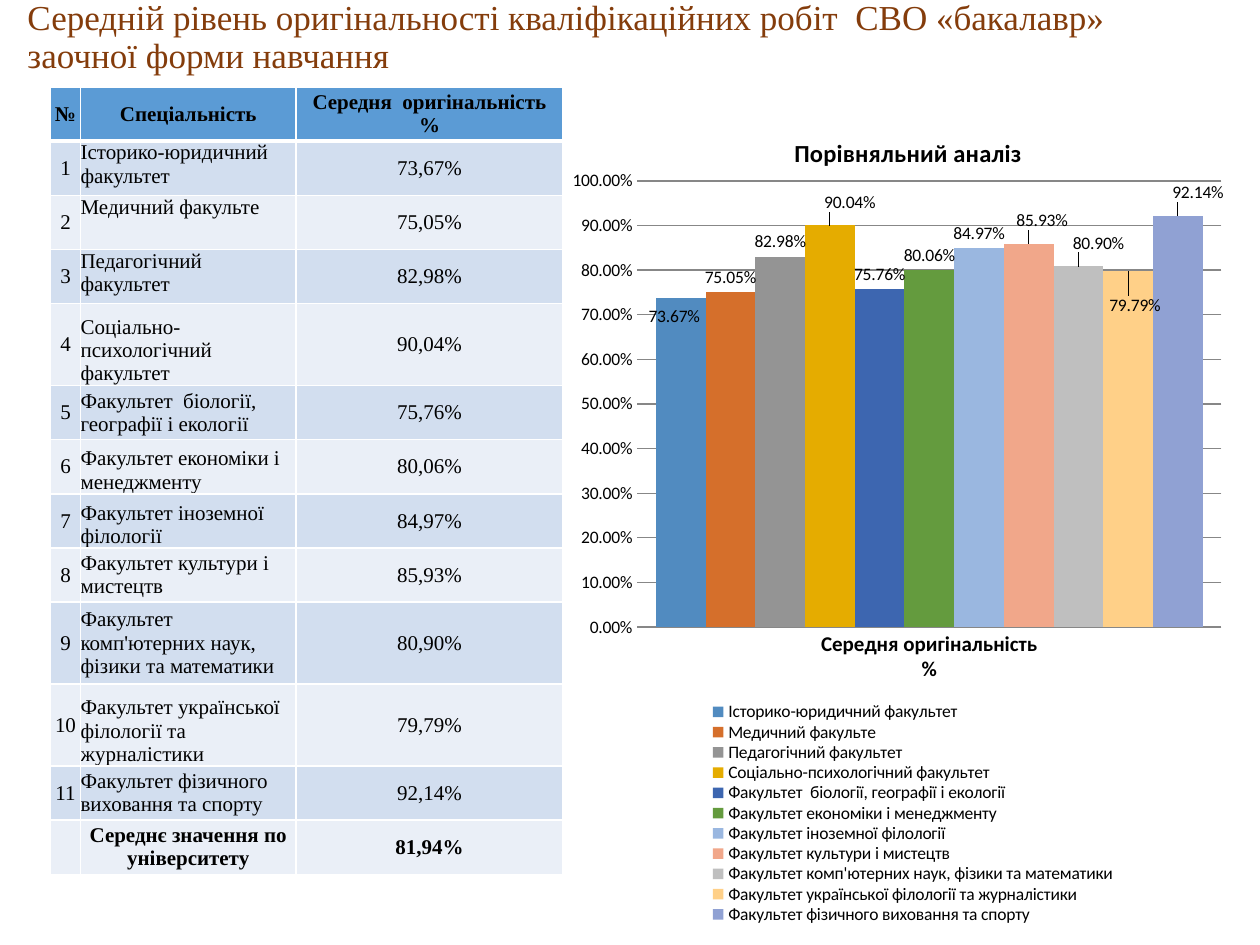
from lxml import etree
from pptx import Presentation
from pptx.chart.data import CategoryChartData
from pptx.dml.color import RGBColor
from pptx.enum import chart as ch, text as tx
from pptx.oxml import parse_xml
from pptx.oxml.ns import nsdecls, qn
from pptx.util import Inches, Pt

BROWN = RGBColor(0x84, 0x3C, 0x0B)
BLACK = RGBColor(0, 0, 0)
GRAY = RGBColor(0x87, 0x87, 0x87)
HEAD = RGBColor(0x5B, 0x9B, 0xD5)
BAND = [RGBColor(0xEA, 0xEF, 0xF7), RGBColor(0xD2, 0xDE, 0xEF)]
BARS = [RGBColor.from_string(c) for c in (
    "518BC0", "D56F2B", "949494", "E5AC00", "3D66B0", "649B3E",
    "9AB7E0", "F1A78A", "BFBFBF", "FFD088", "90A1D3")]
SERIF = "Times New Roman"
TOP, MID, LOW = tx.MSO_ANCHOR.TOP, tx.MSO_ANCHOR.MIDDLE, tx.MSO_ANCHOR.BOTTOM

# name, percent, cell anchor, shift of the bar label as shares of the chart
FACULTIES = [
    ("Історико-юридичний факультет", 73.67, TOP, (-0.01, 0.04)),
    ("Медичний факульте", 75.05, TOP, None),
    ("Педагогічний факультет", 82.98, TOP, None),
    ("Соціально-психологічний факультет", 90.04, LOW, (0.03, -0.01)),
    ("Факультет  біології, географії і екології", 75.76, MID, None),
    ("Факультет економіки і менеджменту", 80.06, LOW, None),
    ("Факультет іноземної філології", 84.97, LOW, None),
    ("Факультет культури і мистецтв", 85.93, MID, (0.02, -0.01)),
    ("Факультет комп'ютерних наук, фізики та математики", 80.90, MID, (0.03, -0.01)),
    ("Факультет української філології та журналістики", 79.79, LOW, (0.01, 0.06)),
    ("Факультет фізичного виховання та спорту", 92.14, MID, (0.03, -0.01)),
]


def style(font, **values):
    color = values.pop("color", BLACK)
    for key, val in values.items():
        setattr(font, key, val)
    font.color.rgb = color


def place(after, **values):
    """Put a manual layout after a chart element, in place of any old one."""
    parent = after.getparent()
    for old in parent.findall(qn("c:layout")):
        parent.remove(old)
    layout = parse_xml(f"<c:layout {nsdecls('c')}><c:manualLayout/></c:layout>")
    for key, val in values.items():
        etree.SubElement(layout[0], qn("c:" + key)).set("val", str(val))
    after.addnext(layout)


prs = Presentation()
prs.slide_width, prs.slide_height = Inches(10), Inches(7.5)
slide = prs.slides.add_slide(prs.slide_layouts[6])

# Title
title = slide.shapes.add_textbox(Inches(0.12), Inches(0.05), Inches(9.76), Inches(0.5))
frame = title.text_frame
frame.word_wrap = True
frame.vertical_anchor = MID
par = frame.paragraphs[0]
par.text = "Середній рівень оригінальності кваліфікаційних робіт  СВО «бакалавр» \vзаочної форми навчання"
par.line_spacing = 0.9
style(par.font, name=SERIF, size=Pt(20), color=BROWN)

# Table
rows = [("№", "Спеціальність", "Середня  оригінальність\v%", MID)]
for num, (name, pct, anchor, _) in enumerate(FACULTIES, 1):
    rows.append((str(num), name, f"{pct:.2f}%".replace(".", ","), anchor))
rows.append(("", "Середнє значення по університету", "81,94%", MID))
last = len(rows) - 1

table = slide.shapes.add_table(len(rows), 3, Inches(0.4), Inches(0.69),
                               Inches(4.07), Inches(6.25)).table
for col, wide in zip(table.columns, (0.24, 1.71, 2.12)):
    col.width = Inches(wide)
for r, (*texts, anchor) in enumerate(rows):
    table.rows[r].height = Inches(0.65 if r in (4, 9, 10) else 0.43)
    for c, words in enumerate(texts):
        cell = table.cell(r, c)
        cell.margin_left = cell.margin_right = cell.margin_top = cell.margin_bottom = 0
        cell.vertical_anchor = anchor if c == 1 else MID
        cell.fill.solid()
        cell.fill.fore_color.rgb = BAND[r % 2] if r else HEAD
        par = cell.text_frame.paragraphs[0]
        par.text = words
        left = c == 1 and 0 < r < last
        par.alignment = tx.PP_ALIGN.LEFT if left else tx.PP_ALIGN.CENTER
        style(par.font, name=SERIF, size=Pt(12), bold=r in (0, last))
        props = cell._tc.get_or_add_tcPr()
        for i, side in enumerate("LRTB"):
            thick = (r, side) in ((0, "B"), (1, "T"))
            props.insert(i, parse_xml(
                f'<a:ln{side} {nsdecls("a")} w="{Pt(3 if thick else 1)}"><a:solidFill>'
                f'<a:srgbClr val="FFFFFF"/></a:solidFill></a:ln{side}>'))

# Chart
data = CategoryChartData(number_format="0.00%")
data.categories = ["Середня оригінальність\n%"]
for name, pct, *_ in FACULTIES:
    data.add_series(name, [round(pct / 100, 4)])
chart = slide.shapes.add_chart(ch.XL_CHART_TYPE.COLUMN_CLUSTERED, Inches(4.53), Inches(0.78),
                               Inches(5.27), Inches(6.56), data).chart
style(chart.font, name="Calibri", size=Pt(10))

chart.has_title = True
head = chart.chart_title
head.include_in_layout = False
par = head.text_frame.paragraphs[0]
par.text = "Порівняльний аналіз"
style(par.font, name="Calibri", size=Pt(14), bold=True)
place(head._element.find(qn("c:tx")), xMode="edge", yMode="edge", x=0.33, y=0.04)

chart.has_legend = True
legend = chart.legend
legend.position = ch.XL_LEGEND_POSITION.BOTTOM
legend.include_in_layout = False
style(legend.font, name="Calibri", size=Pt(10))
place(legend._element.find(qn("c:legendPos")), xMode="edge", yMode="edge",
      x=0.19, y=0.73, w=0.65, h=0.27)

cats, vals = chart.category_axis, chart.value_axis
for axis in (cats, vals):
    axis.major_tick_mark = axis.minor_tick_mark = ch.XL_TICK_MARK.NONE
cats.format.line.color.rgb = GRAY
style(cats.tick_labels.font, name="Calibri", size=Pt(12), bold=True)
vals.minimum_scale, vals.maximum_scale, vals.major_unit = 0, 1, 0.1
vals.format.line.fill.background()
vals.major_gridlines.format.line.color.rgb = GRAY
vals.tick_labels.number_format = "0.00%"
vals.tick_labels.number_format_is_linked = False
style(vals.tick_labels.font, name="Calibri", size=Pt(10))

plot = chart.plots[0]
plot.gap_width, plot.overlap, plot.vary_by_categories = 75, 0, False
for bar, color, (*_, shift) in zip(plot.series, BARS, FACULTIES):
    bar.format.fill.solid()
    bar.format.fill.fore_color.rgb = color
    tags = bar.data_labels
    tags.show_value = True
    tags.number_format, tags.number_format_is_linked = "0.00%", False
    tags.position = ch.XL_LABEL_POSITION.OUTSIDE_END
    style(tags.font, name="Calibri", size=Pt(10))
    if shift:
        bar.points[0].data_label.position = ch.XL_LABEL_POSITION.OUTSIDE_END
        place(bar._element.find(".//" + qn("c:dLbl")).find(qn("c:idx")),
              x=shift[0], y=shift[1])

area = chart._chartSpace.find(".//" + qn("c:plotArea"))
if area.find(qn("c:layout")) is None:
    area.insert(0, parse_xml(f"<c:layout {nsdecls('c')}/>"))
spot = etree.SubElement(area.find(qn("c:layout")), qn("c:manualLayout"))
for key, val in dict(layoutTarget="inner", xMode="edge", yMode="edge",
                     x=0.1, y=0.1, w=0.88, h=0.54).items():
    etree.SubElement(spot, qn("c:" + key)).set("val", str(val))

prs.save("out.pptx")
